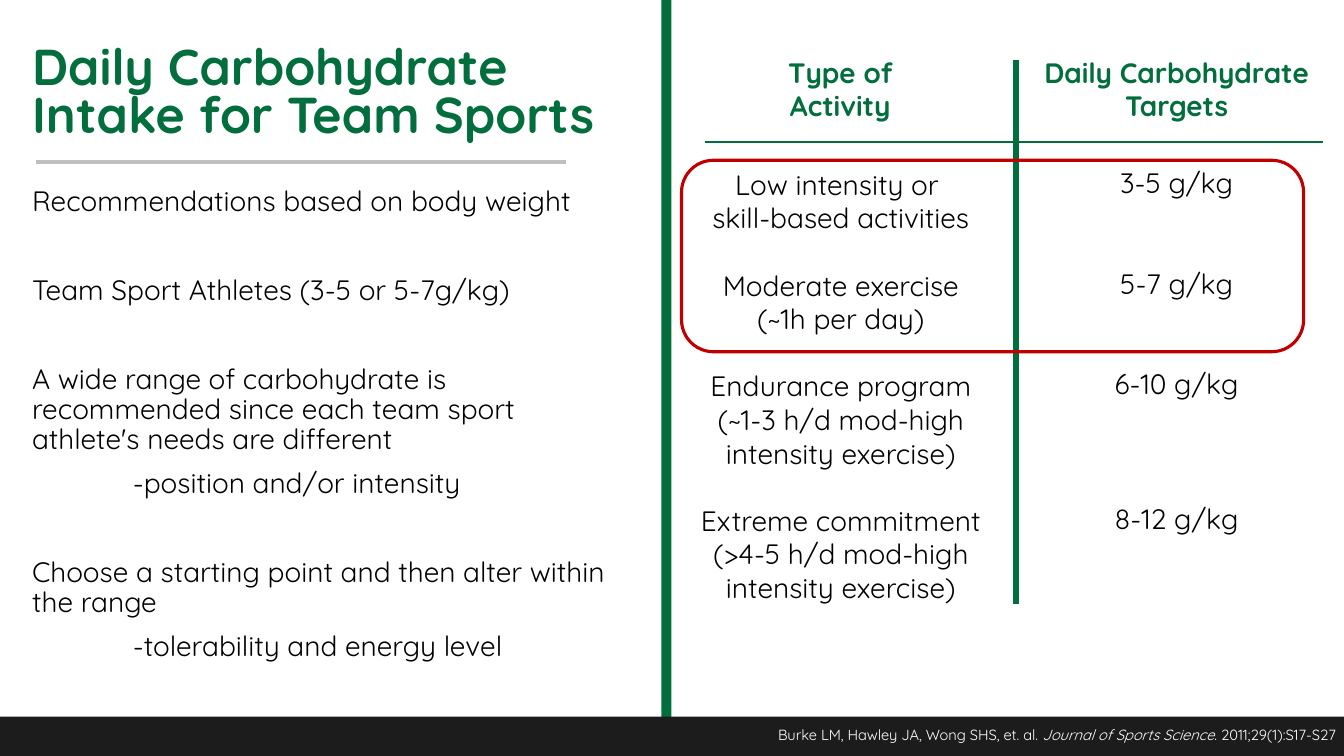
from pptx import Presentation
from pptx import util as u
from pptx.dml.color import RGBColor
from pptx.enum import shapes, text
from pptx.oxml.ns import qn
from lxml import etree

Inches = u.Inches
COLORS = {"green": "036E3D", "dark": "1C1C1C", "gray": "BFBFBF",
          "red": "C00000", "black": "000000", "white": "FFFFFF"}
LINE = 24
BODY_GAP = 36.8
CENTER = text.PP_ALIGN.CENTER
TOP = text.MSO_ANCHOR.TOP

presentation = Presentation()
presentation.slide_width = Inches(13.33)
presentation.slide_height = Inches(7.5)
slide = presentation.slides.add_slide(presentation.slide_layouts[6])


def add_text(box, paragraphs, font, layout, wrap=True, anchor=TOP):
    shape = slide.shapes.add_textbox(*map(Inches, box))
    frame = shape.text_frame
    frame.word_wrap = wrap
    frame.vertical_anchor = anchor
    for index, (runs, before) in enumerate(paragraphs):
        paragraph = frame.paragraphs[0] if index == 0 else frame.add_paragraph()
        for name, value in {**layout, "space_before": u.Pt(before)}.items():
            setattr(paragraph, name, value)
        for words, italic in runs:
            run = paragraph.add_run()
            run.text = words
            run.font.color.rgb = RGBColor.from_string(COLORS[font["color"]])
            style = {"name": "Quicksand", "size": u.Pt(font["size"]),
                     "bold": font.get("bold", False), "italic": italic}
            for name, value in style.items():
                setattr(run.font, name, value)
    return frame


def add_line(start, end, color, width):
    line = slide.shapes.add_connector(shapes.MSO_CONNECTOR.STRAIGHT,
                                      *map(Inches, start + end))
    line.line.color.rgb = RGBColor.from_string(COLORS[color])
    line.line.width = u.Pt(width)
    etree.SubElement(line._element.spPr, qn("a:effectLst"))


bands = [((6.56, 0, 0.1, 7.19), "green"), ((0, 7.11, 13.33, 0.39), "dark")]
for box, color in bands:
    band = slide.shapes.add_shape(shapes.MSO_SHAPE.RECTANGLE, *map(Inches, box))
    band.shadow.inherit = False
    band.fill.solid()
    band.fill.fore_color.rgb = RGBColor.from_string(COLORS[color])
    band.line.fill.background()

add_text((0.22, 0.48, 5.99, 0.93),
         [([("Daily Carbohydrate Intake for Team Sports", False)], 0)],
         {"size": 36, "color": "green", "bold": True},
         {"line_spacing": 0.8}, anchor=text.MSO_ANCHOR.MIDDLE)

plain = {"size": 20, "color": "black"}
advice = [
    ("Recommendations based on body weight", 0, 0),
    ("Team Sport Athletes (3-5 or 5-7g/kg)", BODY_GAP, 0),
    ("A wide range of carbohydrate is recommended since each team sport "
     "athlete's needs are different", BODY_GAP, 0),
    ("-position and/or intensity", 5, 1),
    ("Choose a starting point and then alter within the range", BODY_GAP, 0),
    ("-tolerability and energy level", 5, 1),
]
body = add_text((0.22, 1.81, 6, 4.51),
                [([(words, False)], before) for words, before, indent in advice],
                plain, {"line_spacing": 0.9, "space_after": u.Pt(5)})
for paragraph, (words, before, indent) in zip(body.paragraphs, advice):
    paragraph._p.get_or_add_pPr().set("marL", str(Inches(indent)))

citation = [("Burke LM, Hawley JA, Wong SHS, et. al. ", False),
            ("Journal of Sports Science", True),
            (". 2011;29(1):S17-S27", False)]
add_text((7.19, 7.15, 6.16, 0.28), [(citation, 0)],
         {"size": 10.5, "color": "white"},
         {"alignment": text.PP_ALIGN.RIGHT}, wrap=False)

add_line((0.36, 1.61), (5.61, 1.61), "gray", 3)

headings = [((7.27, 0.5, 2.13, 0.77), "Type of Activity"),
            ((10.22, 0.5, 2.9, 0.77), "Daily Carbohydrate Targets")]
for box, words in headings:
    add_text(box, [([(words, False)], 0)],
             {"size": 20, "color": "green", "bold": True}, {"alignment": CENTER})

columns = [
    ((6.76, 1.61, 3.16, 4.48), [
        ("Low intensity or ", 0),
        ("skill-based activities", 0),
        ("Moderate exercise", 1),
        ("(~1h per day)", 0),
        ("Endurance program", 1),
        ("(~1-3 h/d mod-high intensity exercise)", 0),
        ("Extreme commitment (>4-5 h/d mod-high intensity exercise)", 1)]),
    ((10.09, 1.59, 3.16, 3.8), [
        ("3-5 g/kg", 0), ("5-7 g/kg", 2), ("6-10 g/kg", 2), ("8-12 g/kg", 3)]),
]
for box, rows in columns:
    add_text(box, [([(words, False)], skipped * LINE) for words, skipped in rows],
             plain, {"alignment": CENTER})

add_line((10.08, 0.6), (10.08, 5.99), "green", 4.5)
add_line((6.99, 1.41), (13.12, 1.41), "green", 1.5)

highlight = slide.shapes.add_shape(shapes.MSO_SHAPE.ROUNDED_RECTANGLE,
                                   *map(Inches, (6.76, 1.59, 6.17, 1.9)))
highlight.shadow.inherit = False
highlight.fill.background()
highlight.line.color.rgb = RGBColor.from_string(COLORS["red"])
highlight.line.width = u.Pt(2.25)

presentation.save("out.pptx")
